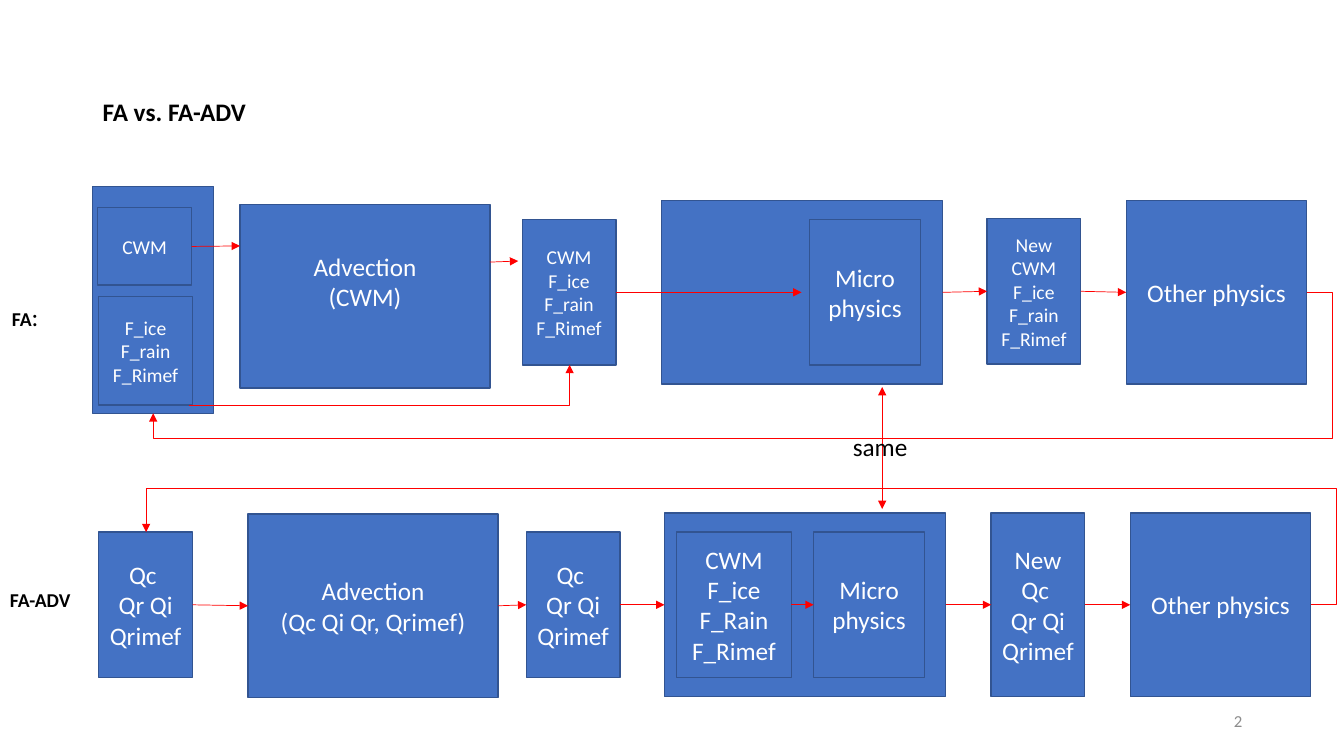
"""Build the FA versus FA-ADV process flow slide."""
from lxml.etree import SubElement
from pptx import Presentation
from pptx.dml.color import RGBColor
from pptx.enum.shapes import MSO_CONNECTOR as CONN, MSO_SHAPE as SHAPE
from pptx.enum.text import MSO_ANCHOR as ANCHOR, PP_ALIGN as ALIGN
from pptx.oxml.ns import qn
from pptx.util import Inches, Pt

COLORS = {"box": "4472C4", "edge": "325491", "arrow": "FF0000",
          "light": "FFFFFF", "dark": "000000", "page": "8C8C8C"}
TOP, LEFT, BOTTOM, RIGHT = range(4)

BOXES = {
    "fa_state": (0.92, 1.85, 1.2, 2.25, "", 14),
    "fa_cwm": (0.97, 2.06, 0.93, 0.77, "CWM", 14),
    "fa_fractions": (0.98, 2.94, 0.93, 1.08, "F_ice\nF_rain\nF_Rimef", 14),
    "fa_advection": (2.38, 2.03, 2.48, 1.82, "Advection\n(CWM)", 18),
    "fa_advected": (5.18, 2.18, 0.93, 1.44, "CWM\nF_ice\nF_rain\nF_Rimef", 14),
    "fa_scheme": (6.56, 1.99, 2.79, 1.82, "", 18),
    "fa_micro": (8.03, 2.18, 1.1, 1.44, "Micro\nphysics", 18),
    "fa_new": (9.79, 2.17, 0.93, 1.44, "New\nCWM\nF_ice\nF_rain\nF_Rimef", 14),
    "fa_other": (11.17, 1.99, 1.79, 1.82, "Other physics", 18),
    "adv_state": (0.98, 5.28, 0.93, 1.44, "Qc \nQr Qi Qrimef", 18),
    "adv_advection": (2.46, 5.1, 2.48, 1.82, "Advection\n(Qc Qi Qr, Qrimef)", 18),
    "adv_advected": (5.22, 5.28, 0.93, 1.44, "Qc \nQr Qi Qrimef", 18),
    "adv_scheme": (6.59, 5.09, 2.79, 1.82, "", 18),
    "adv_cwm": (6.71, 5.28, 1.14, 1.44, "CWM\nF_ice\nF_Rain\nF_Rimef", 18),
    "adv_micro": (8.07, 5.28, 1.1, 1.44, "Micro\nphysics", 18),
    "adv_new": (9.83, 5.09, 0.93, 1.82, "New Qc \nQr Qi Qrimef", 18),
    "adv_other": (11.21, 5.09, 1.79, 1.82, "Other physics", 18),
}

ARROWS = [
    ((1.9, 2.44), (2.38, 2.44), "fa_cwm", None),
    ((4.86, 2.6), (5.14, 2.59), None, None),
    ((6.11, 2.9), (7.95, 2.9), "fa_advected", None),
    ((9.35, 2.9), (9.79, 2.9), "fa_scheme", "fa_new"),
    ((10.72, 2.89), (11.17, 2.89), "fa_new", "fa_other"),
    ((1.91, 6), (2.46, 6.01), "adv_state", "adv_advection"),
    ((4.93, 6.01), (5.22, 6), "adv_advection", "adv_advected"),
    ((6.15, 6), (6.59, 6), "adv_advected", "adv_scheme"),
    ((7.84, 6), (8.07, 6), "adv_cwm", "adv_micro"),
    ((9.39, 6), (9.83, 6), "adv_scheme", "adv_new"),
    ((10.76, 6), (11.21, 6), "adv_new", "adv_other"),
]

BENDS = [
    ((1.87, 4.02), (5.65, 3.62), "bentConnector2", ()),
    ((12.96, 2.9), (1.52, 4.1), "bentConnector4", (-0.022, 1.209)),
    ((13, 6), (1.45, 5.28), "bentConnector4", (-0.022, 1.606)),
]

LABELS = [
    ((0.92, 0.4, 11.5, 1.45), [("FA vs. FA-ADV", 18, True)],
     {"anchor": ANCHOR.MIDDLE, "spacing": 0.9}),
    ((8.36, 4.23, 1.61, 0.4), [("same", 18, False)], {}),
    ((0.02, 2.94, 0.76, 0.4), [("FA", 14, True), (":", 18, False)], {}),
    ((0, 5.78, 0.87, 0.34), [("FA-ADV", 14, True)], {}),
    ((9.42, 6.95, 3, 0.4), [("2", 12, False)],
     {"anchor": ANCHOR.MIDDLE, "align": ALIGN.RIGHT, "color": "page"}),
]


def rgb(name):
    """Return a named colour."""
    return RGBColor.from_string(COLORS[name])


def format_run(r, size, color, bold=False):
    """Set the font of a run."""
    for attr, value in {"name": "Calibri", "size": Pt(size), "bold": bold}.items():
        setattr(r.font, attr, value)
    r.font.color.rgb = rgb(color)


def add_box(s, x, y, w, h, text, size):
    """Add a blue box with centred lines of text."""
    sp = s.shapes.add_shape(SHAPE.RECTANGLE, *map(Inches, (x, y, w, h)))
    sp.shadow.inherit = False
    sp.fill.solid()
    sp.fill.fore_color.rgb = rgb("box")
    sp.line.color.rgb = rgb("edge")
    sp.line.width = Pt(1)
    tf = sp.text_frame
    for attr, value in {"word_wrap": True, "vertical_anchor": ANCHOR.MIDDLE}.items():
        setattr(tf, attr, value)
    if text:
        tf.text = text
    for p in tf.paragraphs:
        p.alignment = ALIGN.CENTER
        for r in p.runs:
            format_run(r, size, "light")
    return sp


def add_label(s, at, runs, anchor=ANCHOR.TOP, align=ALIGN.LEFT, color="dark", spacing=1.0):
    """Add one paragraph of text made of (text, size, bold) runs."""
    tf = s.shapes.add_textbox(*map(Inches, at)).text_frame
    for attr, value in {"word_wrap": True, "vertical_anchor": anchor}.items():
        setattr(tf, attr, value)
    p = tf.paragraphs[0]
    for attr, value in {"alignment": align, "line_spacing": spacing}.items():
        setattr(p, attr, value)
    for text, size, bold in runs:
        r = p.add_run()
        r.text = text
        format_run(r, size, color, bold)


def add_arrow(s, start, end, kind=CONN.STRAIGHT, ends=("tailEnd",)):
    """Add a thin red connector with triangle arrowheads."""
    cx = s.shapes.add_connector(kind, *map(Inches, start + end))
    cx.line.color.rgb = rgb("arrow")
    cx.line.width = Pt(0.5)
    ln = cx.line._get_or_add_ln()
    for tag in ends:
        SubElement(ln, qn(f"a:{tag}"), type="triangle")
    SubElement(cx._element.spPr, qn("a:effectLst"))
    return cx


def add_bend(s, start, end, preset, adjusts):
    """Add a bent arrow with the given preset and adjustments."""
    cx = add_arrow(s, start, end, CONN.ELBOW)
    geom = cx._element.spPr.find(qn("a:prstGeom"))
    geom.set("prst", preset)
    guides = geom.find(qn("a:avLst"))
    for i, ratio in enumerate(adjusts, 1):
        SubElement(guides, qn("a:gd"), name=f"adj{i}", fmla=f"val {round(ratio * 100000)}")


def main():
    """Build and save the slide."""
    prs = Presentation()
    prs.slide_width, prs.slide_height = Inches(13.33), Inches(7.5)
    s = prs.slides.add_slide(prs.slide_layouts[6])
    boxes = {name: add_box(s, *row) for name, row in BOXES.items()}
    boxes["fa_advection"].text_frame.margin_bottom = Inches(0.34)
    for start, end, source, target in ARROWS:
        cx = add_arrow(s, start, end)
        if source:
            cx.begin_connect(boxes[source], RIGHT)
        if target:
            cx.end_connect(boxes[target], LEFT)
    add_arrow(s, (8.75, 3.84), (8.75, 5.05), ends=("headEnd", "tailEnd"))
    for bend in BENDS:
        add_bend(s, *bend)
    for at, runs, options in LABELS:
        add_label(s, at, runs, **options)
    prs.save("out.pptx")


if __name__ == "__main__":
    main()
